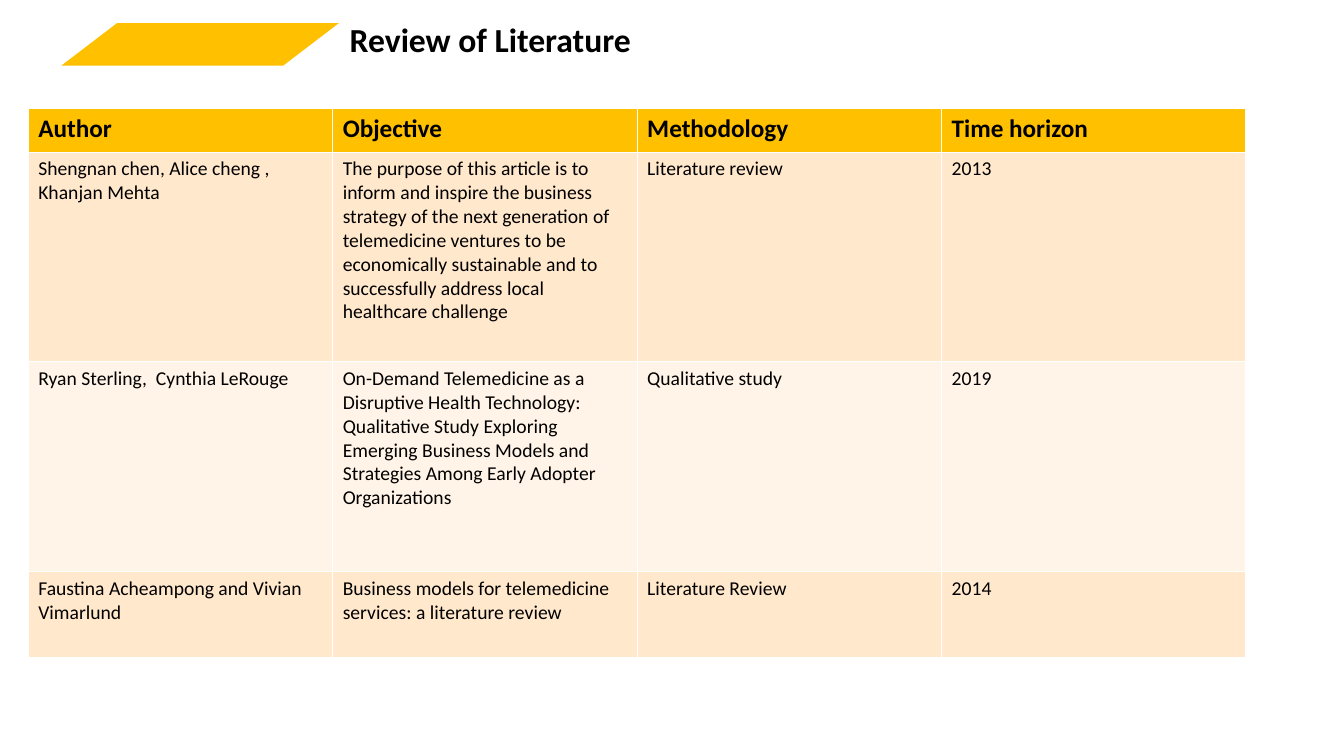
from pptx import Presentation
from pptx.dml.color import RGBColor
from pptx.enum.shapes import MSO_SHAPE
from pptx.util import Inches, Pt

PARALLELOGRAM = MSO_SHAPE.FLOWCHART_DATA
FONT = "Calibri"
BLACK = RGBColor(0x00, 0x00, 0x00)
AMBER = RGBColor(0xFF, 0xC0, 0x00)
BAND_COLORS = (RGBColor(0xFF, 0xE8, 0xCC), RGBColor(0xFF, 0xF4, 0xE7))

COLUMN_WIDTH = 3.02
ROW_HEIGHTS = (0.43, 2.08, 2.08, 0.85)
LITERATURE = (
    ("Author", "Objective", "Methodology", "Time horizon"),
    (
        "Shengnan chen, Alice cheng ,\nKhanjan Mehta",
        "The purpose of this article is to inform and inspire the business "
        "strategy of the next generation of telemedicine ventures to be "
        "economically sustainable and to successfully address local "
        "healthcare challenge",
        "Literature review",
        "2013",
    ),
    (
        "Ryan Sterling,  Cynthia LeRouge",
        "On-Demand Telemedicine as a Disruptive Health Technology: "
        "Qualitative Study Exploring Emerging Business Models and "
        "Strategies Among Early Adopter Organizations",
        "Qualitative study",
        "2019",
    ),
    (
        "Faustina Acheampong and Vivian Vimarlund",
        "Business models for telemedicine services: a literature review",
        "Literature Review",
        "2014",
    ),
)


def write_text(text_frame, text, size, bold):
    text_frame.text = text
    for paragraph in text_frame.paragraphs:
        font = paragraph.font
        font.name = FONT
        font.size = Pt(size)
        font.bold = bold
        font.color.rgb = BLACK


def fill_solid(target, color):
    target.fill.solid()
    target.fill.fore_color.rgb = color


def add_title_banner(slide):
    banner = slide.shapes.add_shape(
        PARALLELOGRAM, Inches(0.61), Inches(0.23), Inches(2.75), Inches(0.42))
    banner.shadow.inherit = False
    fill_solid(banner, AMBER)
    banner.line.fill.background()


def add_title(slide, text):
    title = slide.shapes.add_textbox(
        Inches(3.37), Inches(0.14), Inches(3.09), Inches(0.5))
    title.text_frame.word_wrap = True
    write_text(title.text_frame, text, 24, True)


def add_literature_table(slide):
    """Add the table; its default style supplies the white cell borders."""
    column_count = len(LITERATURE[0])
    table = slide.shapes.add_table(
        len(LITERATURE), column_count, Inches(0.28), Inches(1.08),
        Inches(COLUMN_WIDTH * column_count), Inches(sum(ROW_HEIGHTS))).table
    for column in table.columns:
        column.width = Inches(COLUMN_WIDTH)
    for row_index, (entries, height) in enumerate(zip(LITERATURE, ROW_HEIGHTS)):
        is_header = row_index == 0
        color = AMBER if is_header else BAND_COLORS[(row_index - 1) % 2]
        row = table.rows[row_index]
        row.height = Inches(height)
        for cell, entry in zip(row.cells, entries):
            fill_solid(cell, color)
            write_text(cell.text_frame, entry, 18 if is_header else 14, is_header)


def main():
    presentation = Presentation()
    presentation.slide_width = Inches(13.33)
    presentation.slide_height = Inches(7.5)
    slide = presentation.slides.add_slide(presentation.slide_layouts[6])
    add_literature_table(slide)
    add_title_banner(slide)
    add_title(slide, "Review of Literature")
    presentation.save("out.pptx")


if __name__ == "__main__":
    main()
